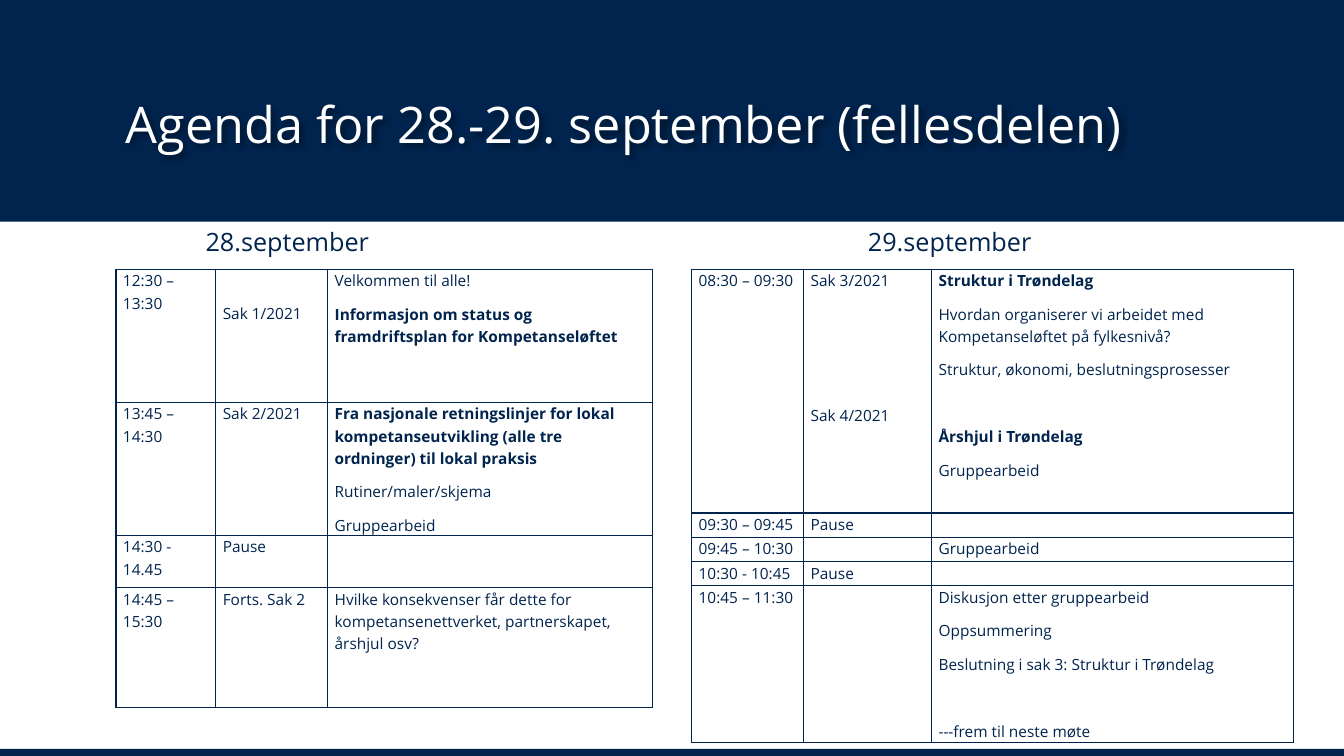
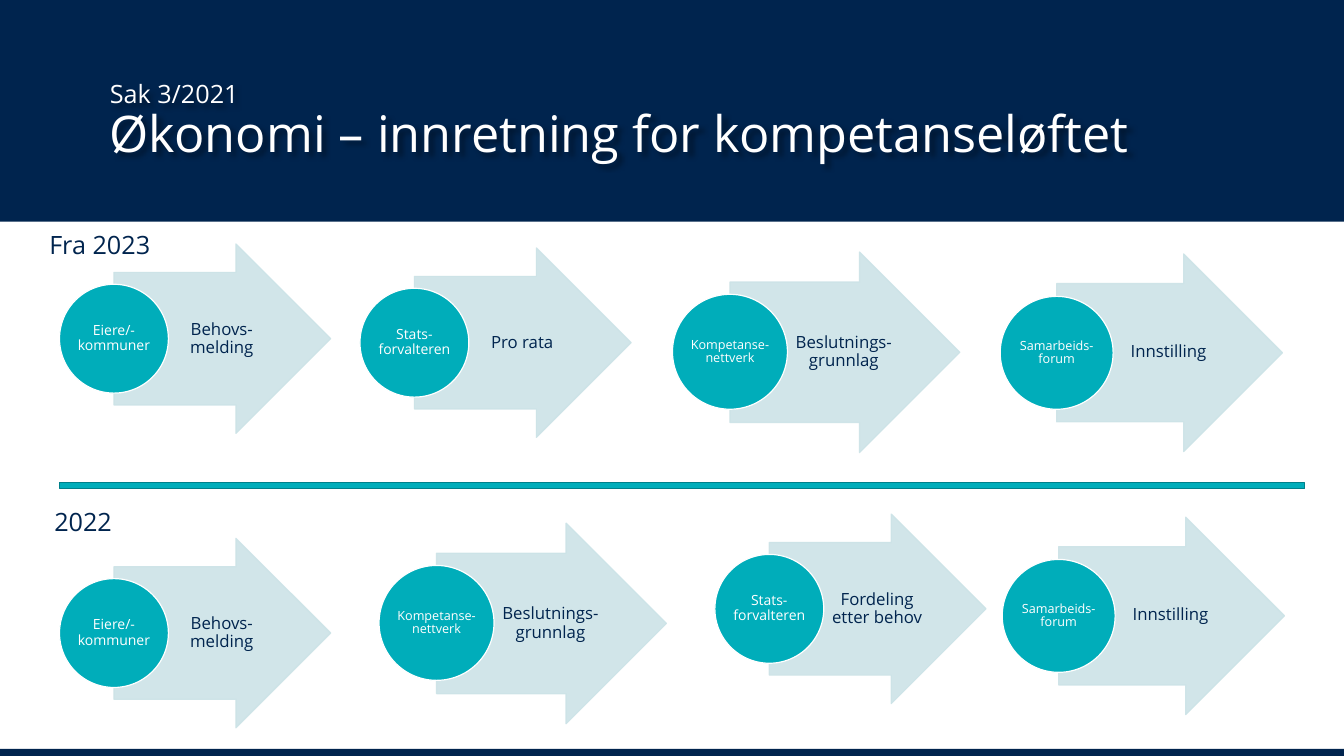
"""Build the agenda slide and the funding process slide."""
from typing import NamedTuple

import lxml.etree
import pptx
import pptx.dml.color
import pptx.enum.shapes
import pptx.enum.text
import pptx.oxml.ns
import pptx.util

PX = 9144
FONT = "Open Sans"
COLORS = {
    "navy": "00244E",
    "white": "FFFFFF",
    "teal": "00ADBA",
    "dark_teal": "00808A",
    "pale": "CCE3E7",
}
SHAPE = pptx.enum.shapes.MSO_SHAPE
ANCHOR = pptx.enum.text.MSO_ANCHOR
ALIGN = pptx.enum.text.PP_ALIGN
qn = pptx.oxml.ns.qn


class Para(NamedTuple):
    text: str
    bold: bool = False
    size: float | None = None
    before: float = 0


class Cell(NamedTuple):
    paras: tuple[Para, ...] = ()
    top: int = 0


class Agenda(NamedTuple):
    day: str
    day_x: int
    x: int
    cols: tuple[int, ...]
    rows: tuple[int, ...]
    cells: tuple[tuple[Cell, ...], ...]


class Stage(NamedTuple):
    x: int
    y: int
    w: int
    actor: str
    size: int
    product: str


def cell(*paras: str | Para, top: int = 0) -> Cell:
    return Cell(tuple(Para(p) if isinstance(p, str) else p for p in paras), top)


AGENDAS = (
    Agenda("28.september", 194, 115, (99, 111, 322), (132, 132, 52, 119), (
        (cell("12:30 – 13:30"), cell("Sak 1/2021", top=32),
         cell("Velkommen til alle!",
              Para("Informasjon om status og framdriftsplan for Kompetanseløftet", True))),
        (cell("13:45 – 14:30"), cell("Sak 2/2021"),
         cell(Para("Fra nasjonale retningslinjer for lokal kompetanseutvikling "
                   "(alle tre ordninger) til lokal praksis", True),
              "Rutiner/maler/skjema", "Gruppearbeid")),
        (cell("14:30 - 14.45"), cell("Pause"), cell()),
        (cell("14:45 – 15:30"), cell("Forts. Sak 2"),
         cell("Hvilke konsekvenser får dette for kompetansenettverket, "
              "partnerskapet, årshjul osv?")),
    )),
    Agenda("29.september", 851, 686, (111, 127, 359), (242, 24, 24, 24, 156), (
        (cell("08:30 – 09:30"), cell("Sak 3/2021", Para("Sak 4/2021", before=72)),
         cell(Para("Struktur i Trøndelag", True),
              "Hvordan organiserer vi arbeidet med Kompetanseløftet på fylkesnivå?",
              "Struktur, økonomi, beslutningsprosesser",
              Para("Årshjul i Trøndelag", True, before=24), "Gruppearbeid")),
        (cell("09:30 – 09:45"), cell("Pause"), cell()),
        (cell("09:45 – 10:30"), cell(), cell("Gruppearbeid")),
        (cell("10:30 - 10:45"), cell("Pause"), cell()),
        (cell("10:45 – 11:30"), cell(),
         cell("Diskusjon etter gruppearbeid", "Oppsummering",
              "Beslutning i sak 3: Struktur i Trøndelag",
              Para("---frem til neste møte", before=24))),
    )),
)

STAGES = (
    Stage(113, 242, 215, "Eiere/- kommuner", 10, "Behovs-melding"),
    Stage(411, 246, 215, "Stats- forvalteren", 10, "Pro rata"),
    Stage(724, 250, 228, "Kompetanse-nettverk", 9, "Beslutnings-grunnlag"),
    Stage(1048, 252, 224, "Samarbeids-forum", 9, "Innstilling"),
    Stage(113, 534, 215, "Eiere/- kommuner", 10, "Behovs-melding"),
    Stage(433, 519, 228, "Kompetanse-nettverk", 9, "Beslutnings-grunnlag"),
    Stage(763, 510, 215, "Stats-forvalteren", 10, "Fordeling etter behov"),
    Stage(1050, 513, 224, "Samarbeids-forum", 9, "Innstilling"),
)


def px(*values: int) -> list[int]:
    return [pptx.util.Emu(v * PX) for v in values]


def rgb(name: str) -> pptx.dml.color.RGBColor:
    return pptx.dml.color.RGBColor.from_string(COLORS[name])


def write(tf, text, *, size: float = 18, color: str = "navy", align=ALIGN.LEFT,
          anchor=ANCHOR.TOP, spacing: float = 1.0, after: float = 0,
          margins: tuple[int, int, int, int] = (10, 5, 10, 5)) -> None:
    paras = (Para(text),) if isinstance(text, str) else text
    tf.word_wrap = True
    tf.vertical_anchor = anchor
    tf.margin_left, tf.margin_top, tf.margin_right, tf.margin_bottom = px(*margins)
    for i, para in enumerate(paras):
        p = tf.paragraphs[0] if i == 0 else tf.add_paragraph()
        p.alignment = align
        p.line_spacing = spacing
        p.space_before = pptx.util.Pt(para.before)
        p.space_after = pptx.util.Pt(after)
        r = p.add_run()
        r.text = para.text
        r.font.name = FONT
        r.font.size = pptx.util.Pt(para.size or size)
        r.font.bold = para.bold
        r.font.color.rgb = rgb(color)


def add_text(s, x: int, y: int, w: int, h: int, text, **fmt):
    sp = s.shapes.add_textbox(*px(x, y, w, h))
    write(sp.text_frame, text, **fmt)
    return sp


def add_shape(s, kind, x: int, y: int, w: int, h: int, fill: str,
              line: str | None = None, alpha: int | None = None):
    sp = s.shapes.add_shape(kind, *px(x, y, w, h))
    sp.shadow.inherit = False
    sp.fill.solid()
    sp.fill.fore_color.rgb = rgb(fill)
    if line:
        sp.line.color.rgb = rgb(line)
        sp.line.width = pptx.util.Pt(0.85)
    else:
        sp.line.fill.background()
    if alpha:
        for clr in sp.element.spPr.iter(qn("a:srgbClr")):
            lxml.etree.SubElement(clr, qn("a:alpha"), val=str(alpha * 1000))
    return sp


def add_title_shadow(sp) -> None:
    sp.shadow.inherit = False
    effects = sp.element.spPr.find(qn("a:effectLst"))
    shadow = lxml.etree.SubElement(effects, qn("a:outerShdw"), blurRad="50800",
                                   dist="38100", dir="2700000", algn="tl")
    clr = lxml.etree.SubElement(shadow, qn("a:prstClr"), val="black")
    lxml.etree.SubElement(clr, qn("a:alpha"), val="40000")


def add_slide(prs, x: int, y: int, title, bottom: int = 0):
    s = prs.slides.add_slide(prs.slide_layouts[6])
    add_shape(s, SHAPE.RECTANGLE, 0, 743, 1333, 7, "navy")
    add_shape(s, SHAPE.RECTANGLE, 0, 0, 1333, 220, "navy")
    sp = add_text(s, x, y, 1102, 118, title, size=36, color="white",
                  anchor=ANCHOR.BOTTOM, spacing=0.9, margins=(10, 5, 10, bottom))
    add_title_shadow(sp)
    return s


def add_borders(c) -> None:
    tc_pr = c._tc.get_or_add_tcPr()
    for i, side in enumerate(("lnL", "lnR", "lnT", "lnB")):
        ln = lxml.etree.Element(qn(f"a:{side}"), w="12700")
        fill = lxml.etree.SubElement(ln, qn("a:solidFill"))
        lxml.etree.SubElement(fill, qn("a:srgbClr"), val=COLORS["navy"])
        tc_pr.insert(i, ln)


def add_agenda(s, a: Agenda) -> None:
    add_text(s, a.day_x, 220, 289, 40, a.day)
    frame = s.shapes.add_table(len(a.rows), len(a.cols),
                               *px(a.x, 267, sum(a.cols), sum(a.rows)))
    table = frame.table
    table.first_row = table.horz_banding = False
    for col, w in zip(table.columns, a.cols):
        col.width = px(w)[0]
    for row, h, contents in zip(table.rows, a.rows, a.cells):
        row.height = px(h)[0]
        for c, content in zip(row.cells, contents):
            c.fill.background()
            add_borders(c)
            c.margin_left, c.margin_top, c.margin_right, c.margin_bottom = px(
                7, content.top, 7, 0)
            if content.paras:
                write(c.text_frame, content.paras, size=11, spacing=1.06, after=8,
                      margins=(7, 0, 7, 0))
            else:
                p = c.text_frame.paragraphs[0]
                lxml.etree.SubElement(p._p, qn("a:endParaRPr"), sz="1100")


def add_stage(s, st: Stage) -> None:
    h = round(st.w * 0.874)
    d = round(st.w / 2)
    label_h = round(h * 0.7)
    arrow = add_shape(s, SHAPE.RIGHT_ARROW, st.x, st.y, st.w, h, "pale", "pale", 90)
    arrow.adjustments[0], arrow.adjustments[1] = 0.7, 0.5
    add_text(s, st.x + d // 2, st.y + (h - label_h) // 2, round(d * 0.975), label_h,
             st.product, size=12, align=ALIGN.CENTER, anchor=ANCHOR.MIDDLE,
             spacing=0.9, margins=(3, 1, 2, 1))
    sp = add_shape(s, SHAPE.OVAL, st.x - d // 2, st.y + (h - d) // 2, d, d,
                   "teal", "white")
    write(sp.text_frame, st.actor, size=st.size, color="white", align=ALIGN.CENTER,
          anchor=ANCHOR.MIDDLE, spacing=0.9, margins=(1, 1, 1, 1))


def main() -> None:
    prs = pptx.Presentation()
    prs.slide_width, prs.slide_height = px(1333, 750)

    s = add_slide(prs, 115, 95, "Agenda for 28.-29. september (fellesdelen)", bottom=60)
    for agenda in AGENDAS:
        add_agenda(s, agenda)

    s = add_slide(prs, 99, 44, (Para("Sak 3/2021", size=18),
                                Para("Økonomi – innretning for kompetanseløftet")))
    add_shape(s, SHAPE.RECTANGLE, 59, 479, 1235, 6, "teal", "dark_teal")
    for stage in STAGES:
        add_stage(s, stage)
    add_text(s, 39, 223, 285, 40, "Fra 2023")
    add_text(s, 44, 497, 285, 40, "2022")

    prs.save("out.pptx")


if __name__ == "__main__":
    main()
